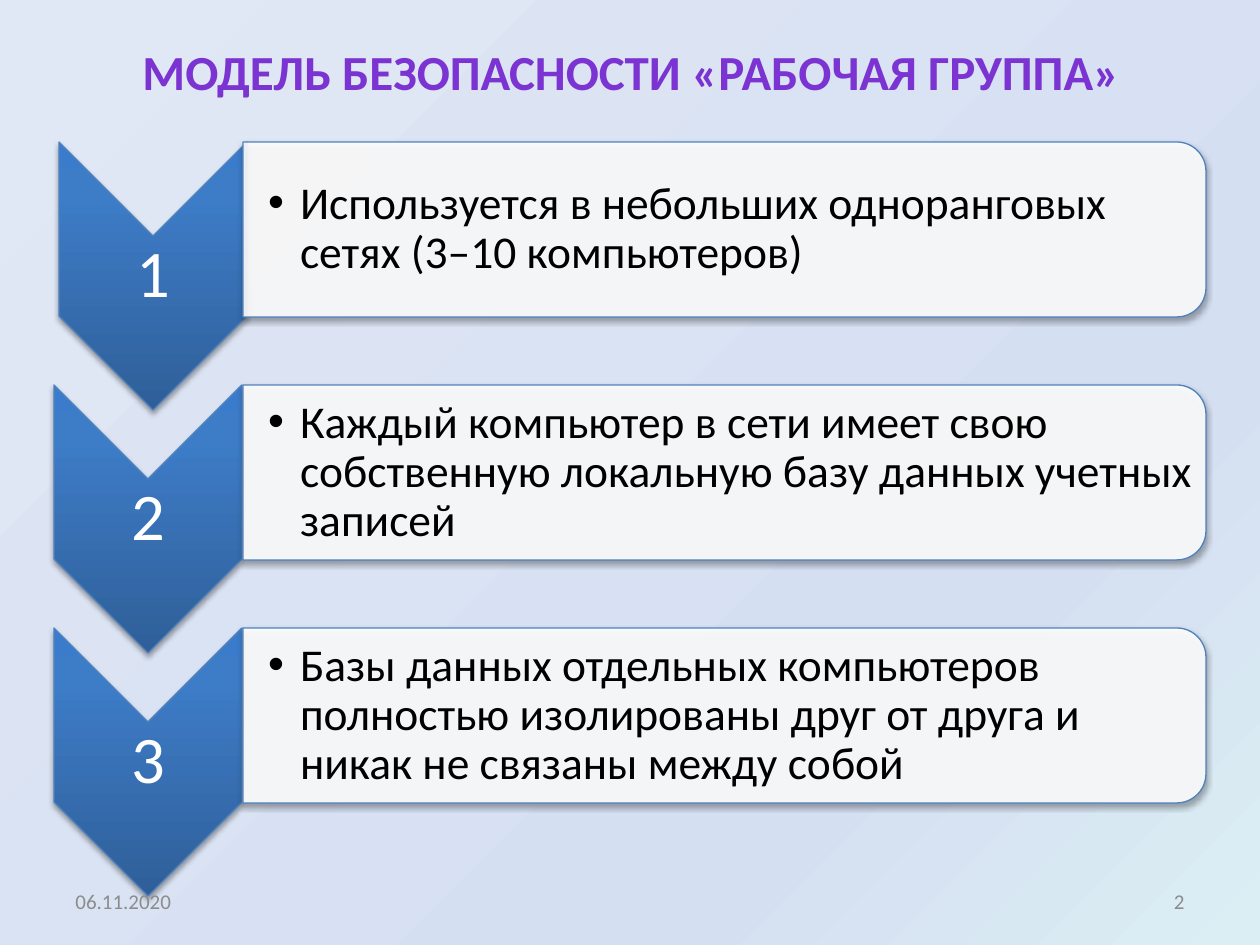
import pptx
import pptx.util
import pptx.dml.color
import pptx.enum.shapes
import pptx.enum.text
import pptx.oxml
import pptx.oxml.ns

PX = 914400 / 126
SLIDE = (1260, 945)
ALIGN = pptx.enum.text.PP_ALIGN
SHAPE = pptx.enum.shapes.MSO_SHAPE
COLORS = {
    "title": "7B34D2", "number": "FFFFFF", "body": "000000", "footer": "8C8C8C",
    "panel": "FFFFFF", "line": "4F81BD", "shadow": "000000",
    "dark": "2F5F99", "middle": "3D7CC7", "light": "3A7CCB",
    "corner": "DBEEF4", "field": "D5DFF2", "edge": "E1E8F5",
}
FONTS = {
    "title": {"size": pptx.util.Pt(28), "bold": True},
    "number": {"size": pptx.util.Pt(38)},
    "body": {"size": pptx.util.Pt(26)},
    "footer": {"size": pptx.util.Pt(12)},
}
STEPS = [
    (59, "Используется в небольших одноранговых сетях (3–10 компьютеров)"),
    (54, "Каждый компьютер в сети имеет свою собственную локальную базу данных учетных записей"),
    (54, "Базы данных отдельных компьютеров полностью изолированы друг от друга и никак не связаны между собой"),
]
CHEVRON_W, CHEVRON_H = 188, 268
PANEL_LEFT, PANEL_W, PANEL_H = 243, 963, 175
FIRST_TOP, PITCH = 142, 243


def emu(px):
    return pptx.util.Emu(round(px * PX))


def rgb(name):
    return pptx.dml.color.RGBColor.from_string(COLORS[name])


def element(xml):
    head, rest = xml.split(" ", 1)
    return pptx.oxml.parse_xml(f"{head} {pptx.oxml.ns.nsdecls('a')} {rest}")


def gradient(stops, direction):
    marks = "".join(
        f'<a:gs pos="{pos * 1000}"><a:srgbClr val="{COLORS[name]}"/></a:gs>'
        for pos, name in stops)
    return element(f'<a:gradFill rotWithShape="0"><a:gsLst>{marks}</a:gsLst>{direction}</a:gradFill>')


def paint_background(slide):
    slide.background.fill.solid()
    plain = slide._element.xpath("p:cSld/p:bg/p:bgPr/a:solidFill")[0]
    direction = '<a:path path="circle"><a:fillToRect l="100000" t="100000"/></a:path>'
    plain.getparent().replace(
        plain, gradient([(0, "corner"), (27, "field"), (100, "edge")], direction))


def write(box, text, role, align, insets=None, spacing=None, bullet=False):
    frame = box.text_frame
    frame.text = text
    settings = {"word_wrap": True, "vertical_anchor": pptx.enum.text.MSO_ANCHOR.MIDDLE}
    if insets:
        sides = ("margin_left", "margin_top", "margin_right", "margin_bottom")
        settings.update(zip(sides, map(emu, insets)))
    for key, value in settings.items():
        setattr(frame, key, value)
    paragraph = frame.paragraphs[0]
    paragraph.alignment = align
    if spacing:
        paragraph.line_spacing = spacing
    if bullet:
        properties = paragraph._p.get_or_add_pPr()
        properties.set("marL", str(emu(32)))
        properties.set("indent", str(emu(-32)))
        properties.append(element('<a:buFont typeface="Arial"/>'))
        properties.append(element('<a:buChar char="•"/>'))
    font = paragraph.runs[0].font
    for key, value in {"name": "Calibri", **FONTS[role]}.items():
        setattr(font, key, value)
    font.color.rgb = rgb(role)


def add_text(slide, left, top, width, height, *content, **options):
    box = slide.shapes.add_textbox(*map(emu, (left, top, width, height)))
    write(box, *content, **options)


def add_turned(slide, kind, left, top, width, height, fill):
    shape = slide.shapes.add_shape(
        kind, emu(left + (width - height) / 2), emu(top + (height - width) / 2),
        emu(height), emu(width))
    shape.rotation = 90
    shape.line.color.rgb = rgb("line")
    shape.line.width = pptx.util.Pt(0.75)
    shape.shadow.inherit = False
    properties = shape._element.spPr
    properties.find(pptx.oxml.ns.qn("a:prstGeom")).addnext(fill)
    properties.find(pptx.oxml.ns.qn("a:effectLst")).append(element(
        '<a:outerShdw blurRad="40000" dist="23000" dir="5400000" rotWithShape="0">'
        f'<a:srgbClr val="{COLORS["shadow"]}"><a:alpha val="35000"/></a:srgbClr></a:outerShdw>'))


def add_title(slide, left, top, width, height):
    title = slide.shapes.title
    bounds = zip(("left", "top", "width", "height"), (left, top, width, height))
    for key, value in bounds:
        setattr(title, key, emu(value))
    write(title, "МОДЕЛЬ БЕЗОПАСНОСТИ «РАБОЧАЯ ГРУППА»", "title", ALIGN.CENTER)


def add_step(slide, left, top, number, statement):
    blue = gradient([(0, "dark"), (80, "middle"), (100, "light")],
                    '<a:lin ang="16200000" scaled="0"/>')
    add_turned(slide, SHAPE.CHEVRON, left, top, CHEVRON_W, CHEVRON_H, blue)
    add_text(slide, left, top + CHEVRON_W // 2, CHEVRON_W, CHEVRON_H - CHEVRON_W,
             str(number), "number", ALIGN.CENTER, insets=(4, 4, 4, 4), spacing=0.9)
    white = element(f'<a:solidFill ><a:srgbClr val="{COLORS["panel"]}">'
                    '<a:alpha val="90000"/></a:srgbClr></a:solidFill>')
    add_turned(slide, SHAPE.ROUND_2_SAME_RECTANGLE, PANEL_LEFT, top, PANEL_W, PANEL_H, white)
    add_text(slide, PANEL_LEFT, top + 9, PANEL_W - 9, PANEL_H - 18,
             statement, "body", ALIGN.LEFT, insets=(25, 2, 2, 2), spacing=0.9, bullet=True)


def add_footer(slide, left, top, width, height):
    part = 294
    add_text(slide, left + width - part, top, part, height, "2", "footer", ALIGN.RIGHT)
    add_text(slide, left, top, part, height, "06.11.2020", "footer", ALIGN.LEFT)


def main():
    deck = pptx.Presentation()
    deck.slide_width, deck.slide_height = map(emu, SLIDE)
    slide = deck.slides.add_slide(deck.slide_layouts[5])
    paint_background(slide)
    add_title(slide, 64, 27, 1134, 87)
    for index, (left, statement) in enumerate(STEPS):
        add_step(slide, left, FIRST_TOP + index * PITCH, index + 1, statement)
    add_footer(slide, 63, 876, 1134, 50)
    deck.save("out.pptx")


if __name__ == "__main__":
    main()
